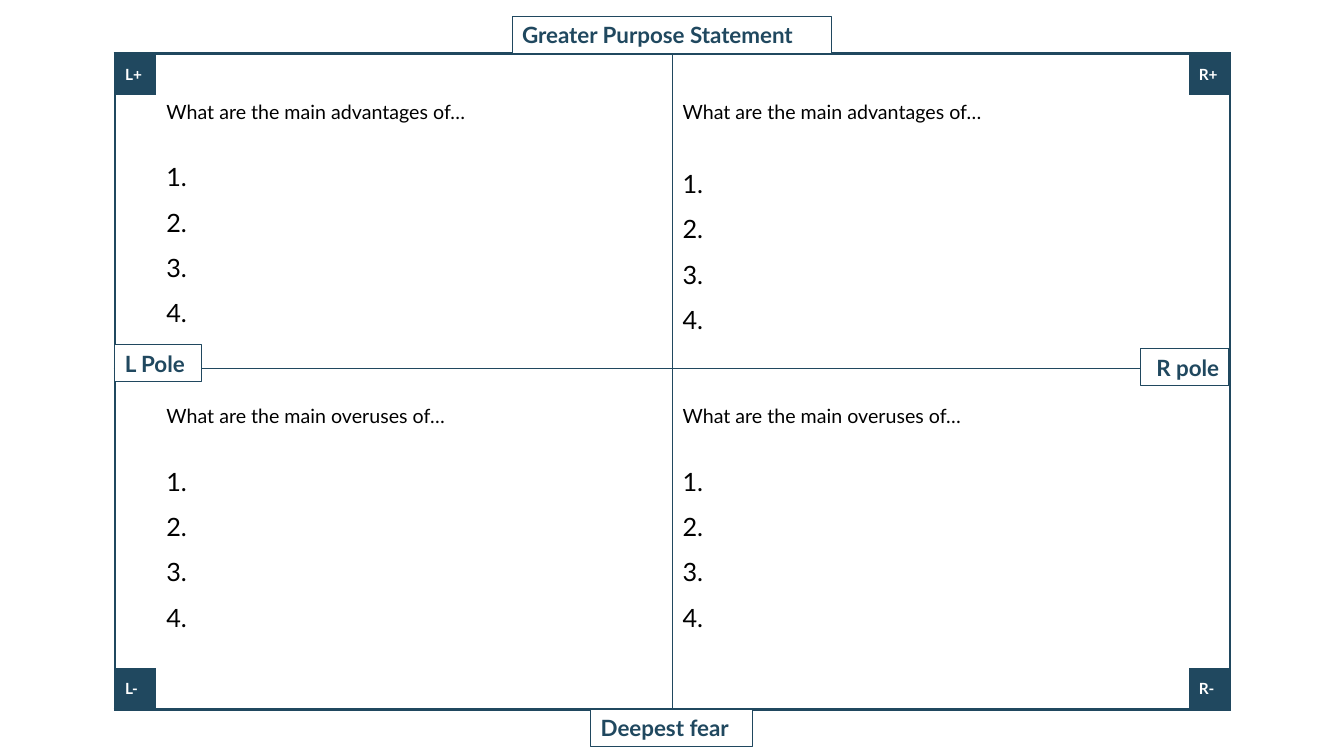
from dataclasses import dataclass

from lxml import etree
from pptx import Presentation
from pptx.dml.color import RGBColor
from pptx.enum.text import MSO_ANCHOR, PP_ALIGN
from pptx.oxml.ns import qn
from pptx.util import Inches, Pt

MIDDLE = MSO_ANCHOR.MIDDLE
LEFT = PP_ALIGN.LEFT
RIGHT = PP_ALIGN.RIGHT


@dataclass(frozen=True)
class Theme:
    font: str = "Lato"
    navy: str = "20485F"
    white: str = "FFFFFF"
    black: str = "000000"
    corner_size: int = 11
    question_size: int = 14
    label_size: int = 16
    number_size: int = 18
    frame_width: float = 2.25
    divider_width: float = 1
    label_line: float = 0.75


THEME = Theme()
COLUMNS = (0.41, 5.12, 5.12, 0.41)
ROWS = (0.41, 2.72, 2.97, 0.41)
LAST = 3
CENTRE = 2
ANSWERS = 4
CORNERS = {(0, 0): "L+", (0, LAST): "R+", (LAST, 0): "L-", (LAST, LAST): "R-"}
ADVANTAGES = "What are the main advantages of…"
OVERUSES = "What are the main overuses of…"
QUADRANTS = (
    (1, 1, ADVANTAGES, 0.05, 16.8),
    (1, 2, ADVANTAGES, 0.05, 21.6),
    (2, 1, OVERUSES, 0.35, 16.8),
    (2, 2, OVERUSES, 0.35, 16.8),
)
LABELS = (
    ("L Pole", 1.14, 3.42, 0.86, LEFT),
    ("R pole", 11.31, 3.46, 0.88, RIGHT),
    ("Greater Purpose Statement", 5.08, 0.16, 3.17, LEFT),
    ("Deepest fear", 5.86, 7.04, 1.6, LEFT),
)


def colour(value):
    return RGBColor.from_string(value)


def add_span(para, text, size, value, bold=False):
    span = para.add_run()
    span.text = text
    span.font.name = THEME.font
    span.font.size = Pt(size)
    span.font.bold = bold
    span.font.color.rgb = colour(value)


def line_width(edge):
    if edge in (0, LAST + 1):
        return THEME.frame_width
    return THEME.divider_width if edge == CENTRE else 0


def set_borders(cell, row, column):
    properties = cell._tc.get_or_add_tcPr()
    edges = (("a:lnL", column), ("a:lnR", column + 1), ("a:lnT", row), ("a:lnB", row + 1))
    for position, (tag, edge) in enumerate(edges):
        border = etree.Element(qn(tag))
        width = line_width(edge)
        if width:
            border.set("w", str(int(Pt(width))))
            fill = etree.SubElement(border, qn("a:solidFill"))
            etree.SubElement(fill, qn("a:srgbClr"), val=THEME.navy)
        else:
            etree.SubElement(border, qn("a:noFill"))
        properties.insert(position, border)


def set_number(para):
    properties = para._p.get_or_add_pPr()
    properties.set("marL", str(Inches(0.38)))
    properties.set("indent", str(-Inches(0.38)))
    etree.SubElement(properties, qn("a:buFont"), typeface="+mj-lt")
    etree.SubElement(properties, qn("a:buAutoNum"), type="arabicPeriod")


def fill_quadrant(cell, question, top, gap):
    cell.margin_top = Inches(top)
    frame = cell.text_frame
    add_span(frame.paragraphs[0], question, THEME.question_size, THEME.black)
    for index in range(ANSWERS):
        para = frame.add_paragraph()
        para.line_spacing = 1.5
        para.space_before = Pt(0 if index else gap)
        set_number(para)
        add_span(para, " ", THEME.number_size, THEME.black)


def add_map(page):
    shape = page.shapes.add_table(len(ROWS), len(COLUMNS), Inches(1.14), Inches(0.53),
                                  Inches(sum(COLUMNS)), Inches(sum(ROWS)))
    table = shape.table
    table.first_row = False
    table.horz_banding = False
    for column, width in zip(table.columns, COLUMNS):
        column.width = Inches(width)
    for row, height in zip(table.rows, ROWS):
        row.height = Inches(height)
    for row in range(len(ROWS)):
        for column in range(len(COLUMNS)):
            cell = table.cell(row, column)
            corner = CORNERS.get((row, column))
            cell.fill.solid()
            cell.fill.fore_color.rgb = colour(THEME.navy if corner else THEME.white)
            set_borders(cell, row, column)
            if corner:
                cell.vertical_anchor = MIDDLE
                add_span(cell.text_frame.paragraphs[0], corner, THEME.corner_size,
                         THEME.white, True)
    for row, column, question, top, gap in QUADRANTS:
        fill_quadrant(table.cell(row, column), question, top, gap)


def add_label(page, text, left, top, width, alignment):
    box = page.shapes.add_textbox(Inches(left), Inches(top), Inches(width), Inches(0.37))
    box.fill.solid()
    box.fill.fore_color.rgb = colour(THEME.white)
    box.line.color.rgb = colour(THEME.navy)
    box.line.width = Pt(THEME.label_line)
    box.text_frame.word_wrap = True
    para = box.text_frame.paragraphs[0]
    para.alignment = alignment
    add_span(para, text, THEME.label_size, THEME.navy, True)


def main():
    deck = Presentation()
    deck.slide_width = Inches(13.33)
    deck.slide_height = Inches(7.5)
    page = deck.slides.add_slide(deck.slide_layouts[6])
    add_map(page)
    for label in LABELS:
        add_label(page, *label)
    deck.save("out.pptx")


if __name__ == "__main__":
    main()
